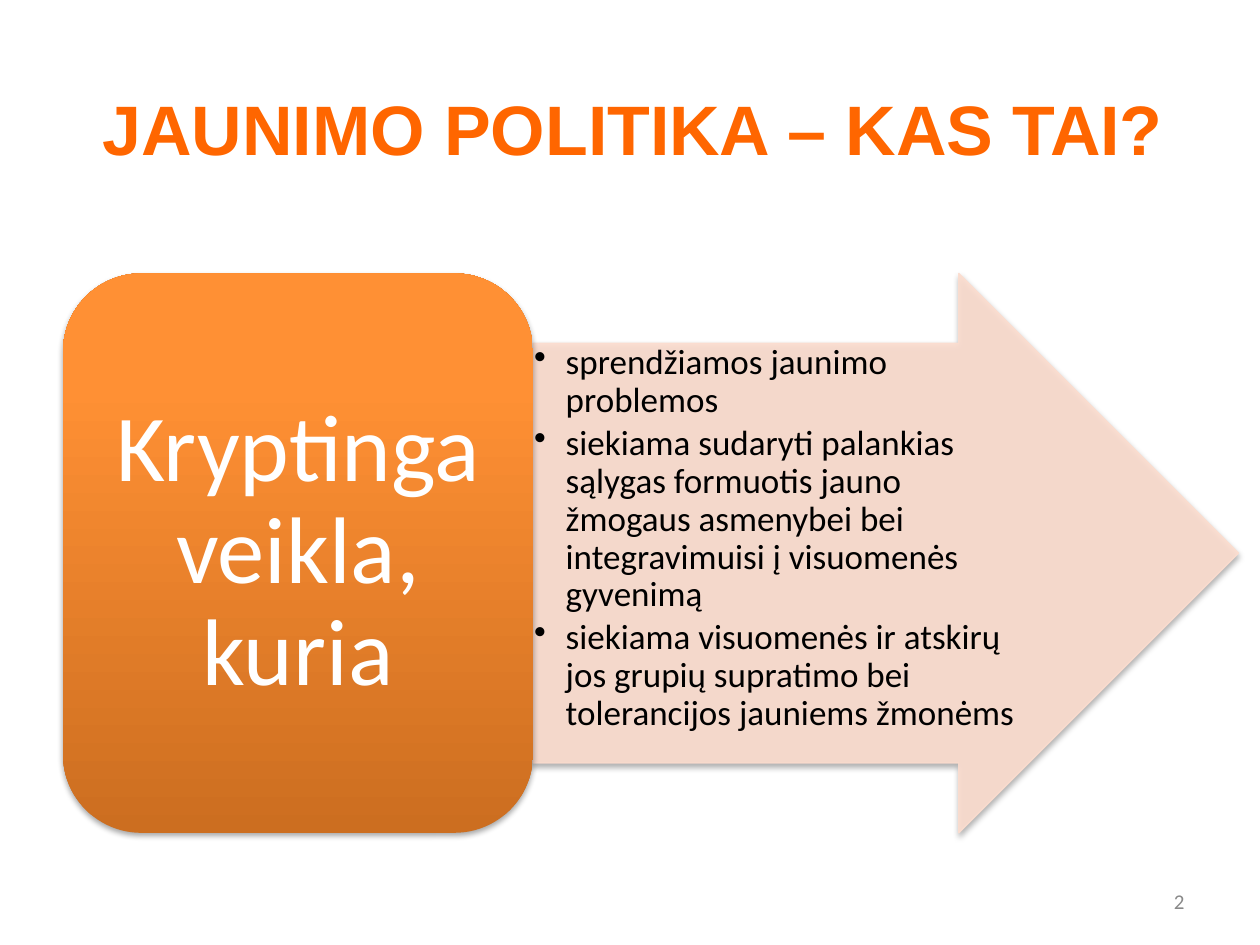
from copy import deepcopy

from lxml import etree
from pptx import Presentation
from pptx.dml.color import RGBColor
from pptx.enum.shapes import MSO_SHAPE
from pptx.enum.text import MSO_ANCHOR, PP_ALIGN
from pptx.oxml.ns import qn
from pptx.util import Inches, Pt

ARROW, ROUNDED = MSO_SHAPE.RIGHT_ARROW, MSO_SHAPE.ROUNDED_RECTANGLE
TOP, MIDDLE = MSO_ANCHOR.TOP, MSO_ANCHOR.MIDDLE
LEFT, CENTER, RIGHT = PP_ALIGN.LEFT, PP_ALIGN.CENTER, PP_ALIGN.RIGHT

TITLE = "JAUNIMO POLITIKA – KAS TAI?"
SUBJECT = "Kryptinga veikla, kuria"
GOALS = [
    "sprendžiamos jaunimo problemos",
    "siekiama sudaryti palankias sąlygas formuotis jauno žmogaus asmenybei "
    "bei integravimuisi į visuomenės gyvenimą",
    "siekiama visuomenės ir atskirų jos grupių supratimo bei tolerancijos "
    "jauniems žmonėms",
]
PAGE_NUMBER = "2"

COLORS = {
    "title": "FF6600", "number": "898989", "goals": "000000",
    "subject": "FFFFFF", "arrow": "FCDDCF", "shadow": "000000",
}
SUBJECT_GRADIENT = [(0, "CC6E20"), (0.8, "FF9034"), (1, "FF9136")]

PAGE_WIDTH, PAGE_HEIGHT = 10, 7.5
MARGIN = 0.05 * PAGE_WIDTH
BAND_TOP, BAND_HEIGHT = 2.17, 4.44
SUBJECT_WIDTH, ARROW_WIDTH = 3.73, 5.6
ARROW_LEFT = MARGIN + SUBJECT_WIDTH
SHAFT = 0.75  # share of the arrow's height
HEAD = 0.5  # head length as a share of the arrow's height
SHAFT_HEIGHT = SHAFT * BAND_HEIGHT
SHAFT_TOP = BAND_TOP + (BAND_HEIGHT - SHAFT_HEIGHT) / 2
GOALS_WIDTH = ARROW_WIDTH - 0.75 * HEAD * BAND_HEIGHT
CORNER = 0.18  # inset that clears the rounded corners


def rgb(name):
    return RGBColor.from_string(COLORS[name])


def add_child(parent, tag, **attributes):
    return etree.SubElement(parent, qn(tag), {k: str(v) for k, v in attributes.items()})


def set_alpha(color, percent):
    add_child(color, "a:alpha", val=percent * 1000)


def add_text(page, place, paragraphs, size, color, font="Calibri", align=LEFT,
             anchor=MIDDLE, insets=(0.1, 0.05), spacing=None, after=0, bold=False):
    box = page.shapes.add_textbox(*map(Inches, place))
    frame = box.text_frame
    frame.word_wrap = True
    frame.vertical_anchor = anchor
    frame.margin_left = frame.margin_right = Inches(insets[0])
    frame.margin_top = frame.margin_bottom = Inches(insets[1])
    frame.text = "\n".join(paragraphs)
    for para in frame.paragraphs:
        para.alignment = align
        para.line_spacing = spacing
        para.space_after = Pt(after)
        para.font.name, para.font.size, para.font.bold = font, Pt(size), bold
        para.font.color.rgb = rgb(color)
    return box


def add_bullets(box, indent):
    for para in box.text_frame.paragraphs:
        props = para._p.get_or_add_pPr()
        props.set("marL", str(Inches(indent)))
        props.set("indent", str(-Inches(indent)))
        bullet = etree.Element(qn("a:buChar"), char="•")
        props.find(qn("a:defRPr")).addprevious(bullet)


def add_panel(page, kind, left, width):
    """Add a shape of the band's height with a soft shadow below it."""
    panel = page.shapes.add_shape(
        kind, *map(Inches, (left, BAND_TOP, width, BAND_HEIGHT)))
    panel.shadow.inherit = False
    effects = panel._element.spPr.find(qn("a:effectLst"))
    shadow = add_child(effects, "a:outerShdw", blurRad=Pt(3.1), dist=Pt(1.8),
                       dir=90 * 60000, rotWithShape=0)
    set_alpha(add_child(shadow, "a:srgbClr", val=COLORS["shadow"]), 35)
    return panel


def fill_gradient(fill, stops, angle):
    fill.gradient()
    fill.gradient_angle = angle
    last = fill.gradient_stops[-1]._gs
    for _ in range(len(stops) - len(fill.gradient_stops)):
        last.addnext(deepcopy(last))
    for stop, (position, color) in zip(fill.gradient_stops, stops):
        stop.position = position
        stop.color.rgb = RGBColor.from_string(color)


deck = Presentation()
deck.slide_width, deck.slide_height = Inches(PAGE_WIDTH), Inches(PAGE_HEIGHT)
page = deck.slides.add_slide(deck.slide_layouts[6])

add_text(page, (7.17, 6.95, 2.33, 0.4), [PAGE_NUMBER], 12, "number", align=RIGHT)
add_text(page, (MARGIN, 0.42, 8.83, 1.18), [TITLE], 40, "title",
         font="Arial", align=RIGHT, bold=True)

arrow = add_panel(page, ARROW, ARROW_LEFT, ARROW_WIDTH)
arrow.adjustments[0], arrow.adjustments[1] = SHAFT, HEAD
arrow.line.width = Pt(0.75)
arrow.fill.solid()
arrow.fill.fore_color.rgb = arrow.line.color.rgb = rgb("arrow")
for color in arrow._element.spPr.findall(".//" + qn("a:solidFill") + "/*"):
    set_alpha(color, 90)

goals = add_text(page, (ARROW_LEFT, SHAFT_TOP, GOALS_WIDTH, SHAFT_HEIGHT), GOALS,
                 20, "goals", anchor=TOP, insets=(0.01, 0.01), spacing=0.9, after=3)
add_bullets(goals, 0.25)

subject = add_panel(page, ROUNDED, MARGIN, SUBJECT_WIDTH)
subject.line.fill.background()
fill_gradient(subject.fill, SUBJECT_GRADIENT, 90)
add_text(page, (MARGIN + CORNER, BAND_TOP + CORNER,
                SUBJECT_WIDTH - 2 * CORNER, BAND_HEIGHT - 2 * CORNER),
         [SUBJECT], 54, "subject", align=CENTER, insets=(0.23, 0.11), spacing=0.9)

deck.save("out.pptx")
